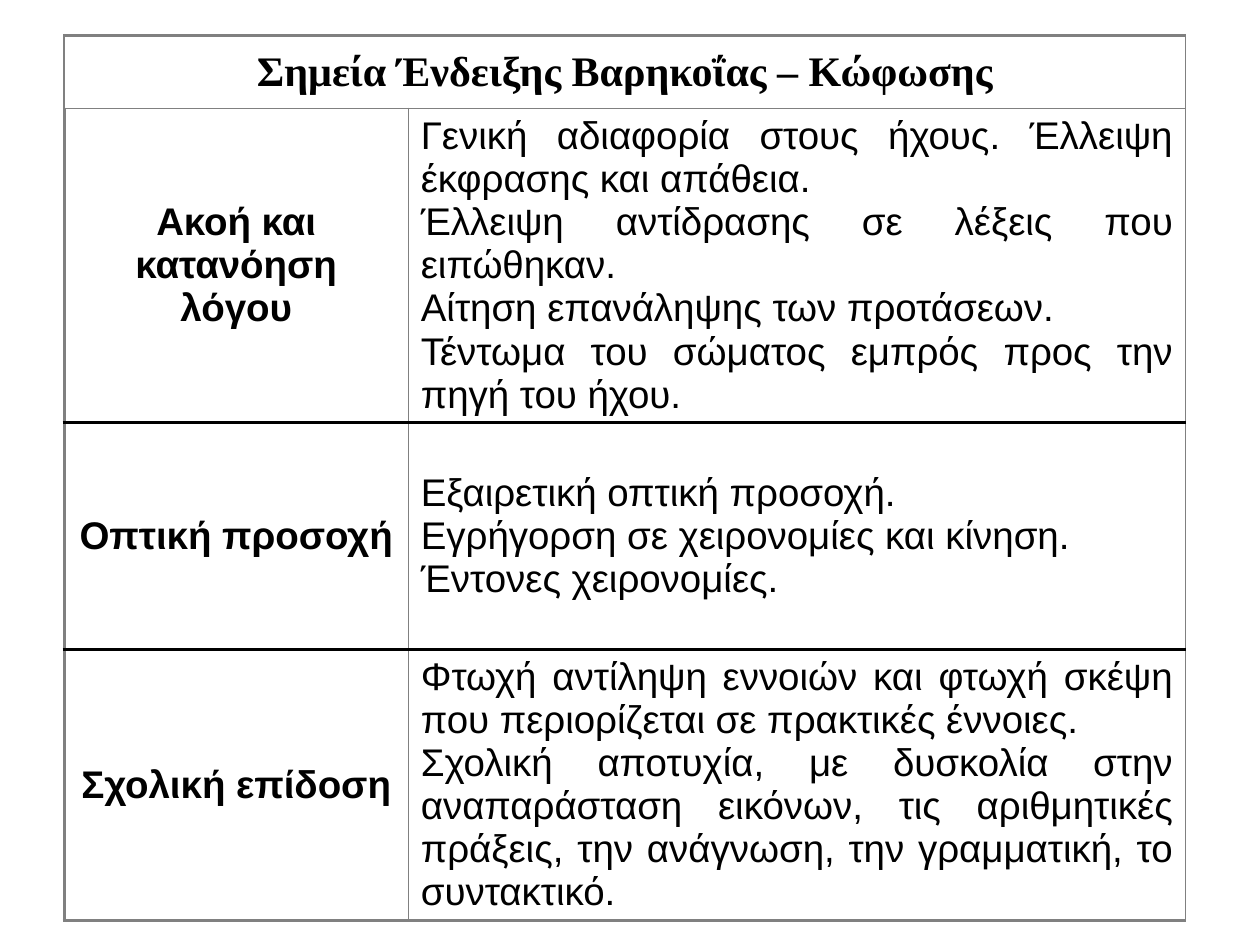
import dataclasses

import lxml.etree
import pptx
import pptx.dml.color
import pptx.enum.text
import pptx.oxml.ns
import pptx.util

Pt = pptx.util.Pt
ALIGN = pptx.enum.text.PP_ALIGN
GREY, BLACK = "808080", "000000"
COLS = (196.6, 444.2)
TITLE_HEIGHT = 41.8
TITLE = "Σημεία Ένδειξης Βαρηκοΐας – Κώφωσης"
TITLE_FONT = {"name": "Times New Roman", "size": Pt(24), "bold": True}
LABEL_FONT = {"name": "Arial", "size": Pt(22), "bold": True}
SIGN_FONT = {**LABEL_FONT, "bold": False}


@dataclasses.dataclass
class Area:
    label: str
    height: float
    signs: list[str]


AREAS = [
    Area("Ακοή και κατανόηση λόγου", 171.4, [
        "Γενική αδιαφορία στους ήχους. Έλλειψη έκφρασης και απάθεια.",
        "Έλλειψη αντίδρασης σε λέξεις που ειπώθηκαν.",
        "Αίτηση επανάληψης των προτάσεων.",
        "Τέντωμα του σώματος εμπρός προς την πηγή του ήχου.",
    ]),
    Area("Οπτική προσοχή", 129.6, [
        "Εξαιρετική οπτική προσοχή.",
        "Εγρήγορση σε χειρονομίες και κίνηση.",
        "Έντονες χειρονομίες.",
    ]),
    Area("Σχολική επίδοση", 133.9, [
        "Φτωχή αντίληψη εννοιών και φτωχή σκέψη που περιορίζεται σε πρακτικές έννοιες.",
        "Σχολική αποτυχία, με δυσκολία στην αναπαράσταση εικόνων, τις αριθμητικές "
        "πράξεις, την ανάγνωση, την γραμματική, το συντακτικό.",
    ]),
]


def rgb(value: str) -> pptx.dml.color.RGBColor:
    return pptx.dml.color.RGBColor.from_string(value)


def set_borders(cell, left: tuple, right: tuple, top: tuple, bottom: tuple) -> None:
    qn = pptx.oxml.ns.qn
    tc_pr = cell._tc.get_or_add_tcPr()
    for side, (color, width) in zip("LRTB", (left, right, top, bottom)):
        ln = lxml.etree.SubElement(tc_pr, qn(f"a:ln{side}"), w=str(Pt(width)))
        fill = lxml.etree.SubElement(ln, qn("a:solidFill"))
        lxml.etree.SubElement(fill, qn("a:srgbClr"), val=color)
    cell.fill.background()


def write_cell(cell, lines: list[str], align: ALIGN, font: dict) -> None:
    cell.vertical_anchor = pptx.enum.text.MSO_ANCHOR.MIDDLE
    tf = cell.text_frame
    for i, line in enumerate(lines):
        p = tf.add_paragraph() if i else tf.paragraphs[0]
        p.alignment = align
        r = p.add_run()
        r.text = line
        r.font.color.rgb = rgb(BLACK)
        for name, value in font.items():
            setattr(r.font, name, value)


def main() -> None:
    prs = pptx.Presentation()
    prs.slide_width, prs.slide_height = Pt(720), Pt(540)
    s = prs.slides.add_slide(prs.slide_layouts[6])
    heights = [TITLE_HEIGHT] + [area.height for area in AREAS]
    table = s.shapes.add_table(
        len(heights), len(COLS), Pt(36.7), Pt(20.2), Pt(sum(COLS)), Pt(sum(heights))
    ).table
    table.first_row = table.horz_banding = False
    for column, width in zip(table.columns, COLS):
        column.width = Pt(width)
    for row, height in zip(table.rows, heights):
        row.height = Pt(height)

    thin, thick, rule = (GREY, 1), (GREY, 2), (BLACK, 2)
    table.cell(0, 0).merge(table.cell(0, 1))
    for cell in table.rows[0].cells:
        set_borders(cell, thin, thin, thick, thin)
    write_cell(table.cell(0, 0), [TITLE], ALIGN.CENTER, TITLE_FONT)

    for i, area in enumerate(AREAS, 1):
        label, signs = table.rows[i].cells
        top = thin if i == 1 else rule
        bottom = thick if i == len(AREAS) else rule
        set_borders(label, thick, thin, top, bottom)
        set_borders(signs, thin, thin, top, bottom)
        write_cell(label, [area.label], ALIGN.CENTER, LABEL_FONT)
        write_cell(signs, area.signs, ALIGN.JUSTIFY, SIGN_FONT)
    prs.save("out.pptx")


if __name__ == "__main__":
    main()
